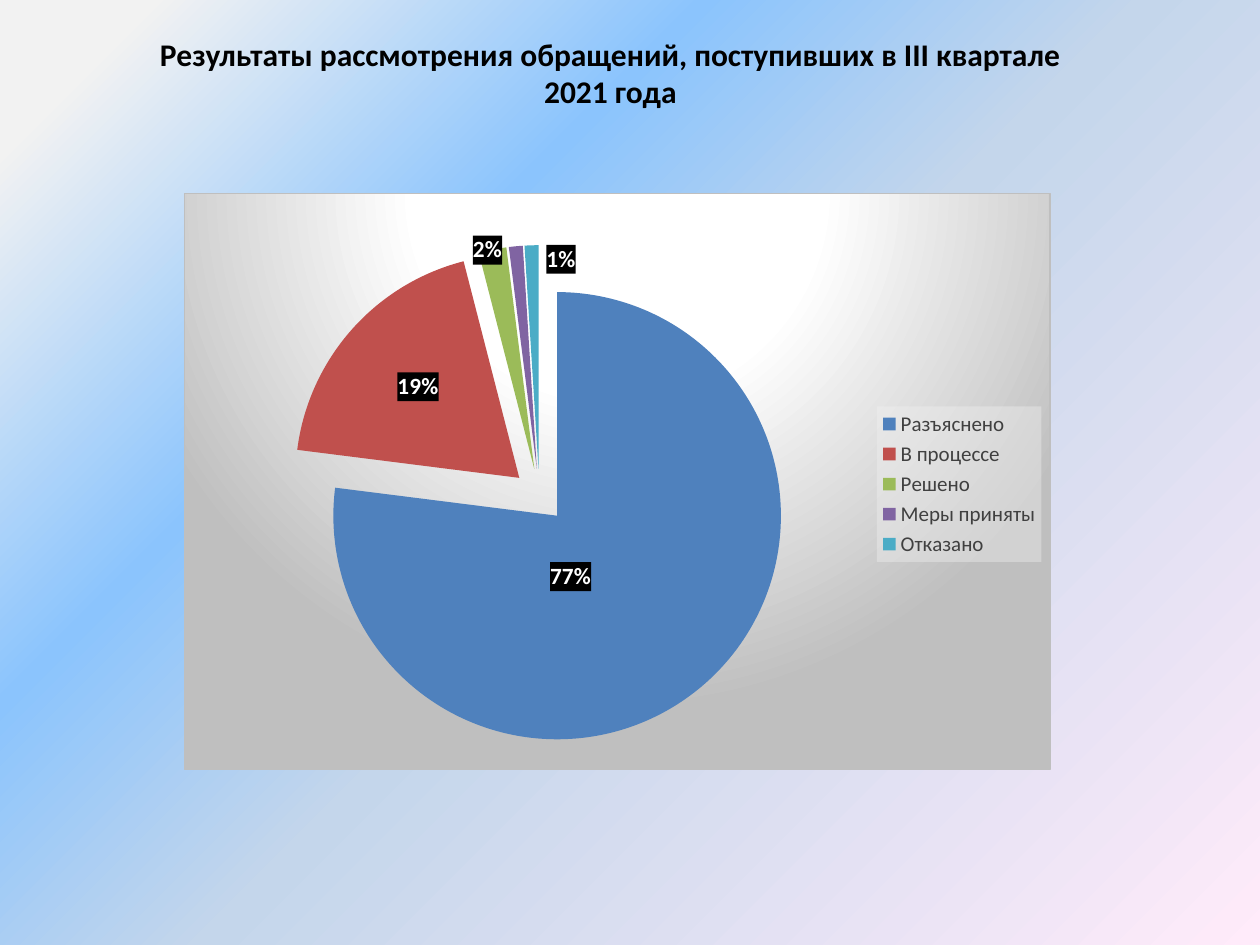
from pptx import Presentation
from pptx.chart.data import CategoryChartData
from pptx.dml.color import RGBColor
from pptx.enum.chart import XL_CHART_TYPE as ChartType, XL_LEGEND_POSITION as LegendPosition
from pptx.enum.text import MSO_ANCHOR as Anchor, PP_ALIGN as Align
from pptx.oxml import parse_xml
from pptx.oxml.ns import nsdecls, qn
from pptx.util import Inches, Pt

FONT = "Calibri"
TITLE = "Результаты рассмотрения обращений, поступивших в III квартале 2021 года"
# category, value, colour, label offset as a share of the chart (None: no label)
OUTCOMES = [
    ("Разъяснено", 77, "4F81BD", (-0.07, -0.04)),
    ("В процессе", 19, "C0504D", (-0.02, -0.03)),
    ("Решено", 2, "9BBB59", (-0.03, -0.19)),
    ("Меры приняты", 1, "8064A2", None),
    ("Отказано", 1, "4BACC6", (0.03, -0.17)),
]
BACKGROUND_STOPS = [(7, "F2F2F2"), (32, "8BC4FD"), (52, "C4D6EB"), (100, "FFEBFA")]
CHART_STOPS = [(0, "FFFFFF"), (39, "FFFFFF"), (100, "BFBFBF")]
LINEAR_45 = '<a:lin ang="2700000" scaled="0"/>'
GLOW_FROM_TOP = ('<a:path path="circle"><a:fillToRect l="50000" t="-80000" '
                 'r="50000" b="180000"/></a:path>')


def rgb(color):
    return RGBColor.from_string(color)


def format_font(font, size, color, bold=False):
    font.name = FONT
    font.size = Pt(size)
    font.bold = bold
    font.color.rgb = rgb(color)


def gradient_xml(stops, direction):
    stop_list = "".join(
        f'<a:gs pos="{position * 1000}"><a:srgbClr val="{color}"/></a:gs>'
        for position, color in stops)
    return (f'<a:gradFill {nsdecls("a")} rotWithShape="1">'
            f'<a:gsLst>{stop_list}</a:gsLst>{direction}</a:gradFill>')


def fill_xml(color, opacity):
    return (f'<a:solidFill><a:srgbClr val="{color}">'
            f'<a:alpha val="{opacity * 1000}"/></a:srgbClr></a:solidFill>')


def shape_properties(content):
    return parse_xml(f'<c:spPr {nsdecls("c", "a")}>{content}</c:spPr>')


def manual_layout(x, y, width=None, height=None, inner=False):
    """Layout with shares of the chart; without a size, x and y are offsets."""
    parts = '<c:layoutTarget val="inner"/>' if inner else ""
    if width is not None:
        parts += '<c:xMode val="edge"/><c:yMode val="edge"/>'
    parts += f'<c:x val="{x}"/><c:y val="{y}"/>'
    if width is not None:
        parts += f'<c:w val="{width}"/><c:h val="{height}"/>'
    return f'<c:layout {nsdecls("c")}><c:manualLayout>{parts}</c:manualLayout></c:layout>'


def set_background(slide):
    slide.background.fill.gradient()
    default = slide.element.find(".//" + qn("a:gradFill"))
    default.getparent().replace(
        default, parse_xml(gradient_xml(BACKGROUND_STOPS, LINEAR_45)))


def set_title(slide):
    title = slide.shapes.title
    title.left, title.top = Inches(0.91), Inches(0.22)
    title.width, title.height = Inches(7.87), Inches(0.71)
    frame = title.text_frame
    frame.text = TITLE
    frame.vertical_anchor = Anchor.MIDDLE
    paragraph = frame.paragraphs[0]
    paragraph.alignment = Align.CENTER
    format_font(paragraph.runs[0].font, 18, "000000", bold=True)


def add_percent_labels(series):
    """White percentages on dark boxes, each moved by its own offset."""
    style = (
        f'<c:spPr>{fill_xml("000000", 75)}</c:spPr>'
        '<c:txPr><a:bodyPr/><a:p><a:pPr><a:defRPr sz="1330" b="1">'
        '<a:solidFill><a:srgbClr val="FFFFFF"/></a:solidFill>'
        f'<a:latin typeface="{FONT}"/></a:defRPr></a:pPr></a:p></c:txPr>'
        '<c:dLblPos val="ctr"/><c:showLegendKey val="0"/><c:showVal val="0"/>'
        '<c:showCatName val="0"/><c:showSerName val="0"/>'
        '<c:showPercent val="1"/><c:showBubbleSize val="0"/>')
    labels = ""
    for index, (_, _, _, offset) in enumerate(OUTCOMES):
        content = manual_layout(*offset) + style if offset else '<c:delete val="1"/>'
        labels += f'<c:dLbl><c:idx val="{index}"/>{content}</c:dLbl>'
    series.find(qn("c:cat")).addprevious(parse_xml(
        f'<c:dLbls {nsdecls("c", "a")}>{labels}{style}'
        '<c:showLeaderLines val="1"/></c:dLbls>'))


def replace_layout(parent, layout):
    for old in parent.findall(qn("c:layout")):
        parent.remove(old)
    parent.insert(0, parse_xml(layout))


def format_legend(chart):
    chart.has_legend = True
    legend = chart.legend
    legend.position = LegendPosition.RIGHT
    legend.include_in_layout = False
    format_font(legend.font, 12, "404040")
    element = chart.element.find(".//" + qn("c:legend"))
    for old in element.findall(qn("c:layout")):
        element.remove(old)
    element.find(qn("c:legendPos")).addnext(
        parse_xml(manual_layout(0.8, 0.37, 0.19, 0.27)))
    element.find(qn("c:txPr")).addprevious(shape_properties(fill_xml("F2F2F2", 39)))


def add_outcome_pie(slide):
    data = CategoryChartData()
    data.categories = [outcome[0] for outcome in OUTCOMES]
    data.add_series("Series 1", [outcome[1] for outcome in OUTCOMES])
    chart = slide.shapes.add_chart(
        ChartType.PIE_EXPLODED, Inches(1.46), Inches(1.53),
        Inches(6.88), Inches(4.58), data).chart
    chart.has_title = False
    format_font(chart.font, 10, "000000")
    plot = chart.plots[0]
    plot.vary_by_categories = True

    for index, (_, _, color, _) in enumerate(OUTCOMES):
        fill = plot.series[0].points[index].format.fill
        fill.solid()
        fill.fore_color.rgb = rgb(color)
    series = chart.element.find(".//" + qn("c:ser"))
    series.find(qn("c:explosion")).set("val", "12")
    add_percent_labels(series)

    format_legend(chart)
    replace_layout(chart.element.find(".//" + qn("c:plotArea")),
                   manual_layout(0.12, 0.09, 0.58, 0.87, inner=True))
    border = '<a:ln w="9525"><a:solidFill><a:srgbClr val="BFBFBF"/></a:solidFill></a:ln>'
    chart.element.find(qn("c:chart")).addnext(
        shape_properties(gradient_xml(CHART_STOPS, GLOW_FROM_TOP) + border))


def main():
    presentation = Presentation()
    presentation.slide_width, presentation.slide_height = Inches(10), Inches(7.5)
    slide = presentation.slides.add_slide(presentation.slide_layouts[5])
    set_background(slide)
    set_title(slide)
    add_outcome_pie(slide)
    presentation.save("out.pptx")


if __name__ == "__main__":
    main()
